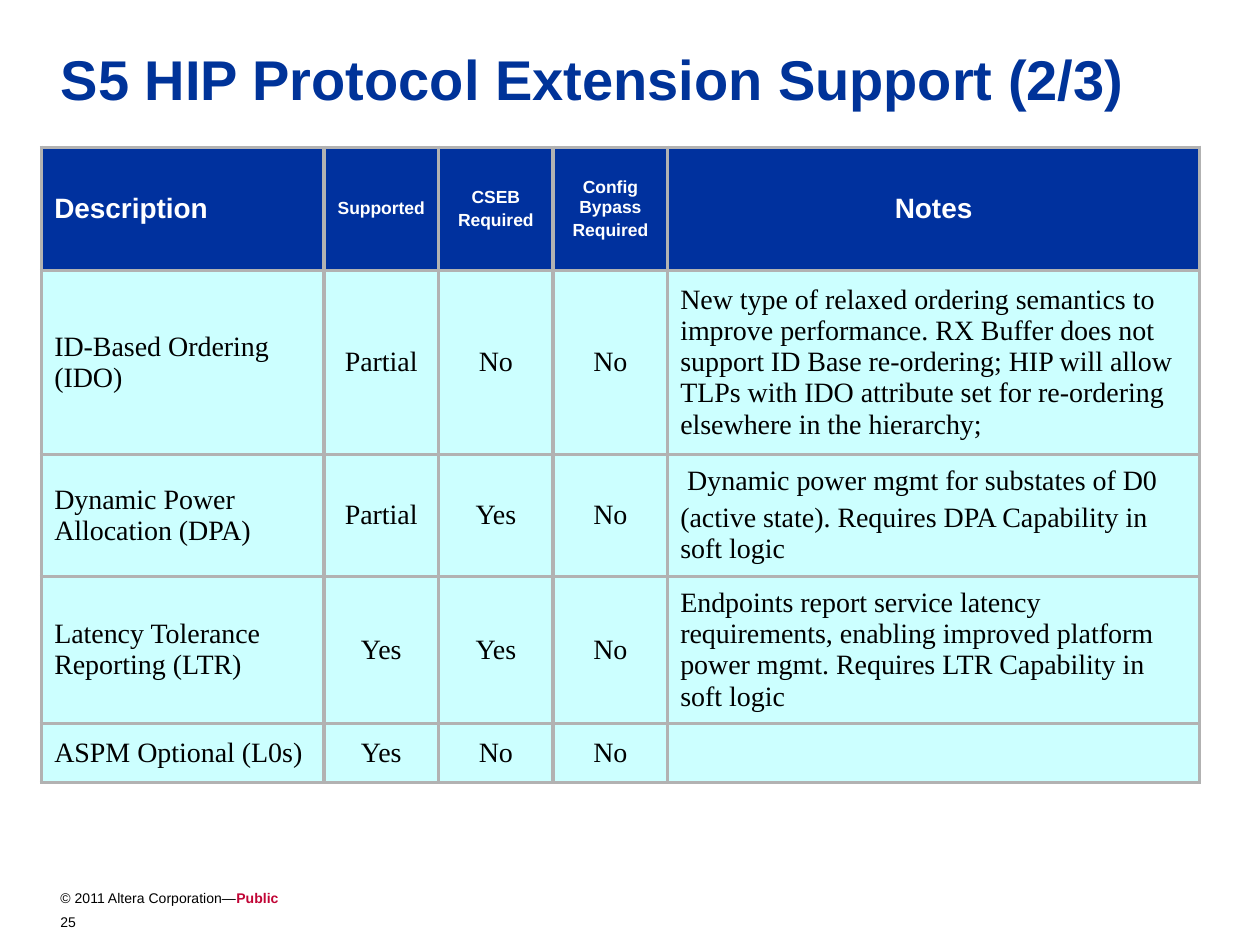
from lxml.etree import SubElement
from pptx import Presentation
from pptx.dml.color import RGBColor
from pptx.enum.text import MSO_ANCHOR, MSO_AUTO_SIZE, PP_ALIGN
from pptx.oxml.ns import qn
from pptx.util import Cm, Pt

COLORS = {
    "title": "003399",
    "header": "00319E",
    "body": "CCFFFF",
    "border": "B2B2B2",
    "white": "FFFFFF",
    "black": "000000",
    "public": "C10435",
}
COLUMN_WIDTHS = [5.69, 2.31, 2.31, 2.31, 10.72]
ROW_HEIGHTS = [2.48, 3.71, 2.46, 2.77, 1.19]
ROWS = [
    ["Description", "Supported", "CSEB\nRequired", "Config Bypass\nRequired", "Notes"],
    ["ID-Based Ordering (IDO)", "Partial", "No", "No",
     "New type of relaxed ordering semantics to improve performance. "
     "RX Buffer does not support ID Base re-ordering; HIP will allow TLPs "
     "with IDO attribute set for re-ordering elsewhere in the hierarchy;"],
    ["Dynamic Power Allocation (DPA)", "Partial", "Yes", "No",
     " Dynamic power mgmt for substates of D0\n"
     "(active state). Requires DPA Capability in soft logic"],
    ["Latency Tolerance Reporting (LTR)", "Yes", "Yes", "No",
     "Endpoints report service latency requirements, enabling improved "
     "platform power mgmt. Requires LTR Capability in soft logic"],
    ["ASPM Optional (L0s)", "Yes", "No", "No", ""],
]


class SlideBuilder:
    heading_font = "Arial"
    body_font = "Times New Roman"
    border_width = Pt(2.25)

    def __init__(self, deck):
        self.page = deck.slides.add_slide(deck.slide_layouts[5])

    def style(self, span, size, color, bold=False, name=heading_font):
        span.font.name = name
        span.font.size = Pt(size)
        span.font.bold = bold
        span.font.color.rgb = RGBColor.from_string(COLORS[color])

    def title(self, text, left, top, width, height):
        box = self.page.shapes.title
        box.left, box.top, box.width, box.height = map(Cm, (left, top, width, height))
        frame = box.text_frame
        frame.text = text
        frame.auto_size = MSO_AUTO_SIZE.NONE
        frame.vertical_anchor = MSO_ANCHOR.TOP
        paragraph = frame.paragraphs[0]
        paragraph.alignment = PP_ALIGN.LEFT
        self.style(paragraph.runs[0], 32, "title", True)

    def label(self, parts, left, top, width, height):
        box = self.page.shapes.add_textbox(*map(Cm, (left, top, width, height)))
        box.text_frame.word_wrap = True
        for text, color, bold in parts:
            span = box.text_frame.paragraphs[0].add_run()
            span.text = text
            self.style(span, 8, color, bold)

    def borders(self, cell):
        properties = cell._tc.get_or_add_tcPr()
        for side in ("a:lnL", "a:lnR", "a:lnT", "a:lnB"):
            line = SubElement(properties, qn(side), w=str(self.border_width))
            fill = SubElement(line, qn("a:solidFill"))
            SubElement(fill, qn("a:srgbClr"), val=COLORS["border"])

    def cell(self, cell, text, is_header, centered, size):
        self.borders(cell)
        cell.fill.solid()
        cell.fill.fore_color.rgb = RGBColor.from_string(
            COLORS["header" if is_header else "body"])
        cell.vertical_anchor = MSO_ANCHOR.MIDDLE
        cell.text_frame.text = text
        for index, paragraph in enumerate(cell.text_frame.paragraphs):
            paragraph.alignment = PP_ALIGN.CENTER if centered else PP_ALIGN.LEFT
            if index:
                paragraph.space_before = Pt(0.2 * size)
            for span in paragraph.runs:
                if is_header:
                    self.style(span, size, "white", True)
                else:
                    self.style(span, size, "black", name=self.body_font)

    def table(self, rows, left, top):
        table = self.page.shapes.add_table(
            len(rows), len(COLUMN_WIDTHS), Cm(left), Cm(top),
            Cm(sum(COLUMN_WIDTHS)), Cm(sum(ROW_HEIGHTS))).table
        for column, width in zip(table.columns, COLUMN_WIDTHS):
            column.width = Cm(width)
        for row, height in zip(table.rows, ROW_HEIGHTS):
            row.height = Cm(height)
        last = len(COLUMN_WIDTHS) - 1
        for row_index, row in enumerate(rows):
            is_header = row_index == 0
            for column_index, text in enumerate(row):
                is_narrow = 0 < column_index < last
                centered = is_narrow or (is_header and column_index == last)
                size = 10 if is_header and is_narrow else 16
                self.cell(table.cell(row_index, column_index), text,
                          is_header, centered, size)


def main():
    deck = Presentation()
    deck.slide_width, deck.slide_height = Cm(25.4), Cm(19.05)
    builder = SlideBuilder(deck)
    builder.label([("© 2011 Altera Corporation—", "black", False),
                   ("Public", "public", True)], 0.97, 17.81, 11.81, 1.07)
    builder.label([("25", "black", False)], 0.97, 18.29, 1.93, 0.76)
    builder.title("S5 HIP Protocol Extension Support (2/3)", 0.97, 0.76, 23.14, 2.54)
    builder.table(ROWS, 0.84, 2.97)
    deck.save("out.pptx")


if __name__ == "__main__":
    main()
